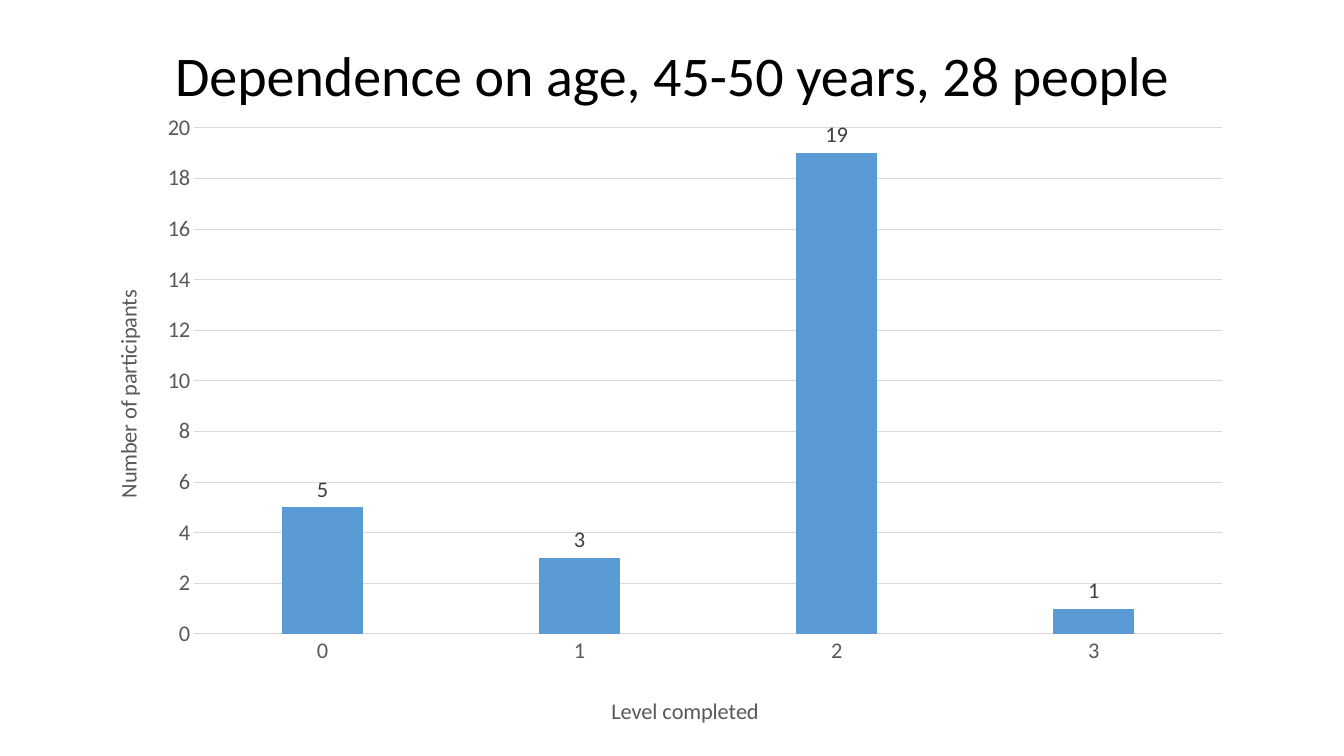
from dataclasses import dataclass

from lxml import etree
from pptx import Presentation
from pptx import util as u
from pptx.chart.data import CategoryChartData
from pptx.dml.color import RGBColor
from pptx.enum import chart as charts, text
from pptx.oxml import ns


@dataclass(frozen=True)
class Theme:
    font: str = "Calibri"
    title_size: int = 40
    chart_size: int = 16
    title: str = "000000"
    axis: str = "595959"
    label: str = "404040"
    grid: str = "D9D9D9"
    bar: str = "5B9BD5"


THEME = Theme()


def format_font(font, *, size=THEME.chart_size, color=THEME.axis):
    font.name = THEME.font
    font.size = u.Pt(size)
    font.bold = False
    font.color.rgb = RGBColor.from_string(color)


def format_line(line):
    line.color.rgb = RGBColor.from_string(THEME.grid)
    line.width = u.Pt(0.75)


def set_layout(layout, *, inner=False, **fractions):
    for child in list(layout):
        layout.remove(child)
    manual = etree.SubElement(layout, ns.qn("c:manualLayout"))
    settings = {"layoutTarget": "inner"} if inner else {}
    settings |= {"xMode": "edge", "yMode": "edge"} | fractions
    for name, value in settings.items():
        etree.SubElement(manual, ns.qn(f"c:{name}")).set("val", str(value))


def find_layout(parent, position):
    layout = parent.find(ns.qn("c:layout"))
    if layout is None:
        layout = etree.Element(ns.qn("c:layout"))
        parent.insert(position, layout)
    return layout


def add_title(page, wording):
    box = page.shapes.title
    box.left, box.top = u.Cm(2.33), u.Cm(0.4)
    box.width, box.height = u.Cm(29.21), u.Cm(3.15)
    frame = box.text_frame
    frame.vertical_anchor = text.MSO_ANCHOR.MIDDLE
    frame.word_wrap = True
    para = frame.paragraphs[0]
    para.alignment = text.PP_ALIGN.CENTER
    para.line_spacing = 0.9
    span = para.add_run()
    span.text = wording
    format_font(span.font, size=THEME.title_size, color=THEME.title)


def format_axis(axis, title, *, x, y):
    format_font(axis.tick_labels.font)
    axis.major_tick_mark = charts.XL_TICK_MARK.NONE
    axis.minor_tick_mark = charts.XL_TICK_MARK.NONE
    para = axis.axis_title.text_frame.paragraphs[0]
    span = para.add_run()
    span.text = title
    format_font(span.font)
    set_layout(find_layout(axis.axis_title._element, 1), x=x, y=y)


def add_column_chart(page, categories, values):
    data = CategoryChartData()
    data.categories = categories
    data.add_series("Series 1", values)
    chart = page.shapes.add_chart(
        charts.XL_CHART_TYPE.COLUMN_CLUSTERED,
        u.Cm(2.16), u.Cm(2.57), u.Cm(29.21), u.Cm(15.98), data,
    ).chart
    chart.has_title = False
    chart.has_legend = False
    format_font(chart.font, color=THEME.title)

    format_axis(chart.category_axis, "Level completed", x=0.45, y=0.93)
    format_line(chart.category_axis.format.line)
    format_axis(chart.value_axis, "Number of participants", x=0.02, y=0.29)
    chart.value_axis.minimum_scale = 0
    chart.value_axis.maximum_scale = 20
    chart.value_axis.major_unit = 2
    chart.value_axis.format.line.fill.background()
    format_line(chart.value_axis.major_gridlines.format.line)

    plot = chart.plots[0]
    plot.gap_width = 219
    plot.overlap = -27
    plot.vary_by_categories = False
    fill = plot.series[0].format.fill
    fill.solid()
    fill.fore_color.rgb = RGBColor.from_string(THEME.bar)
    plot.has_data_labels = True
    labels = plot.data_labels
    labels.show_value = True
    labels.position = charts.XL_LABEL_POSITION.OUTSIDE_END
    format_font(labels.font, color=THEME.label)

    area = chart._chartSpace.chart.plotArea
    set_layout(find_layout(area, 0), inner=True,
               x=0.0935, y=0.041, w=0.887, h=0.798)


def main():
    deck = Presentation()
    deck.slide_width, deck.slide_height = u.Cm(33.87), u.Cm(19.05)
    page = deck.slides.add_slide(deck.slide_layouts.get_by_name("Title Only"))
    add_title(page, "Dependence on age, 45-50 years, 28 people")
    add_column_chart(page, ["0", "1", "2", "3"], [5, 3, 19, 1])
    deck.save("out.pptx")


if __name__ == "__main__":
    main()
